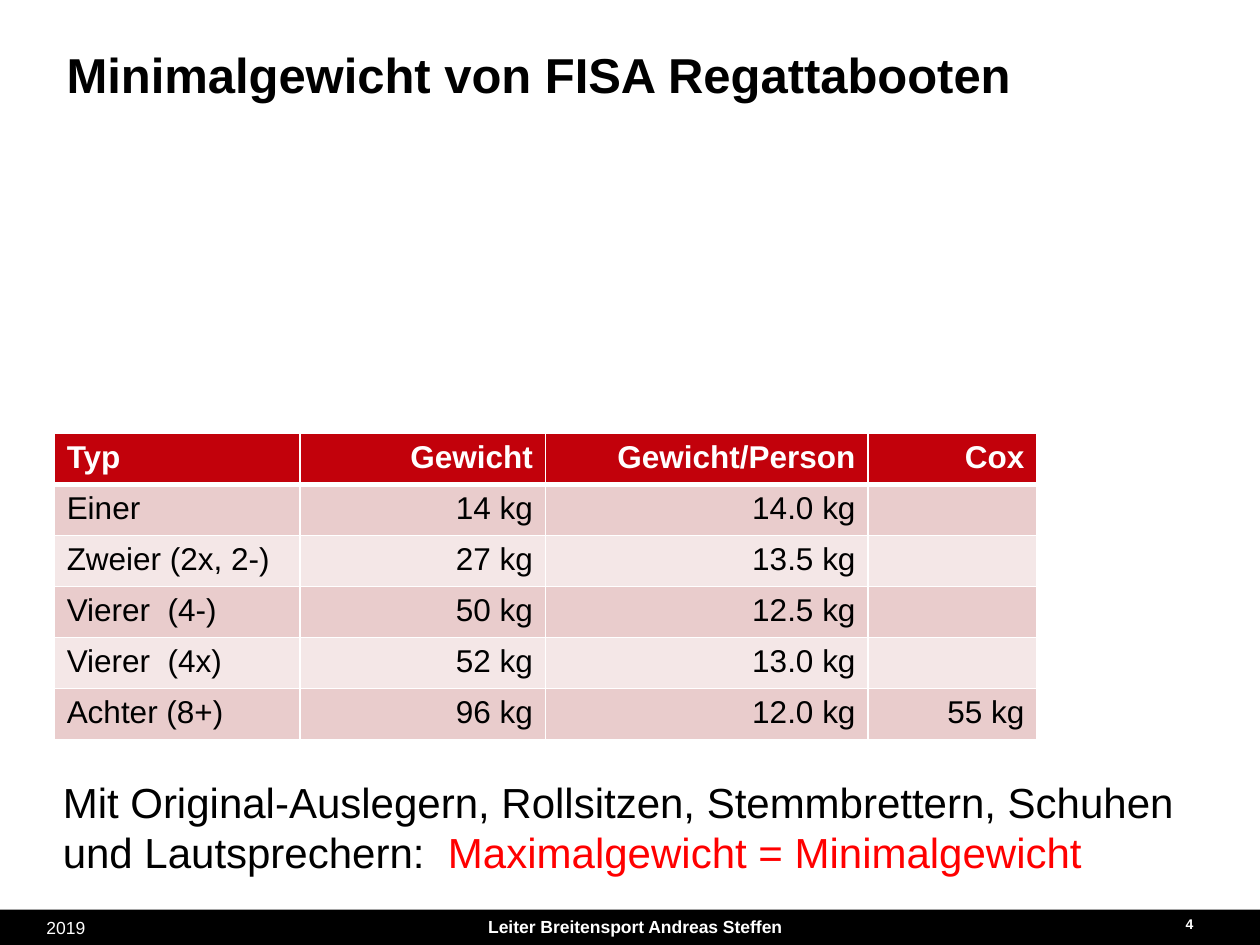
from pptx import Presentation
from pptx.dml.color import RGBColor
from pptx.enum.shapes import MSO_SHAPE
from pptx.enum.text import MSO_ANCHOR, PP_ALIGN
from pptx.oxml import parse_xml
from pptx.oxml.ns import nsdecls
from pptx.util import Inches, Pt

RECTANGLE = MSO_SHAPE.RECTANGLE
TOP, MIDDLE = MSO_ANCHOR.TOP, MSO_ANCHOR.MIDDLE
LEFT, CENTER, RIGHT = PP_ALIGN.LEFT, PP_ALIGN.CENTER, PP_ALIGN.RIGHT

BLACK, WHITE, RED = "000000", "FFFFFF", "FF0000"
HEADER_FILL = "C2010B"
BAND_FILLS = ("E9CCCC", "F4E7E7")
COLUMN_WIDTHS = (1.95, 1.95, 2.56, 1.34)
BOATS = (
    ("Typ", "Gewicht", "Gewicht/Person", "Cox"),
    ("Einer", "14 kg", "14.0 kg", ""),
    ("Zweier (2x, 2-)", "27 kg", "13.5 kg", ""),
    ("Vierer  (4-)", "50 kg", "12.5 kg", ""),
    ("Vierer  (4x)", "52 kg", "13.0 kg", ""),
    ("Achter (8+)", "96 kg", "12.0 kg", "55 kg"),
)


def rgb(value):
    return RGBColor.from_string(value)


def lengths(box):
    return [Inches(value) for value in box]


def style_font(font, size, color, bold=False):
    settings = {"name": "Arial", "size": Pt(size), "bold": bold}
    for name, value in settings.items():
        setattr(font, name, value)
    font.color.rgb = rgb(color)


def write(frame, phrases, size, align=LEFT, anchor=TOP, bold=False):
    frame.word_wrap = True
    frame.vertical_anchor = anchor
    paragraph = frame.paragraphs[0]
    paragraph.alignment = align
    for words, color in phrases:
        run = paragraph.add_run()
        run.text = words
        style_font(run.font, size, color, bold)


def add_panel(slide, box, fill):
    panel = slide.shapes.add_shape(RECTANGLE, *lengths(box))
    panel.shadow.inherit = False
    panel.fill.solid()
    panel.fill.fore_color.rgb = rgb(fill)
    panel.line.fill.background()
    return panel


def add_label(slide, box, words, size, **layout):
    label = slide.shapes.add_textbox(*lengths(box))
    write(label.text_frame, [(words, WHITE)], size, **layout)


def add_footer(slide, box):
    left, top, width, height = box
    add_panel(slide, box, BLACK)
    add_label(slide, (left + 0.27, top + 0.01, 1.42, height), "2019", 10)
    add_label(slide, (left + 1.14, top, 7.8, height),
              "Leiter Breitensport Andreas Steffen", 10, align=CENTER, bold=True)
    add_label(slide, (left + width - 0.9, top - 0.09, 0.47, 0.4), "4", 8,
              align=RIGHT, anchor=MIDDLE, bold=True)


def add_title(slide, box):
    title = add_panel(slide, box, WHITE)
    write(title.text_frame, [("Minimalgewicht von FISA Regattabooten", BLACK)],
          28, anchor=MIDDLE, bold=True)


def add_remark(slide, box):
    remark = add_panel(slide, box, WHITE)
    write(remark.text_frame, [
        ("Mit Original-Auslegern, Rollsitzen, Stemmbrettern, Schuhen "
         "und Lautsprechern:  ", BLACK),
        ("Maximalgewicht = Minimalgewicht", RED),
    ], 24)


def set_borders(cell, widths):
    properties = cell._tc.get_or_add_tcPr()
    for position, (side, width) in enumerate(widths.items()):
        properties.insert(position, parse_xml(
            f'<a:{side} {nsdecls("a")} w="{Pt(width)}"><a:solidFill>'
            f'<a:srgbClr val="{WHITE}"/></a:solidFill></a:{side}>'))


def add_weight_table(slide, box):
    table = slide.shapes.add_table(len(BOATS), len(COLUMN_WIDTHS), *lengths(box)).table
    for column, width in zip(table.columns, COLUMN_WIDTHS):
        column.width = Inches(width)
    for row, boat in enumerate(BOATS):
        header = row == 0
        fill = HEADER_FILL if header else BAND_FILLS[(row - 1) % 2]
        color = WHITE if header else BLACK
        for column, entry in enumerate(boat):
            cell = table.cell(row, column)
            cell.fill.solid()
            cell.fill.fore_color.rgb = rgb(fill)
            set_borders(cell, {"lnL": 1, "lnR": 1,
                               "lnT": 3 if row == 1 else 1,
                               "lnB": 3 if header else 1})
            if entry:
                write(cell.text_frame, [(entry, color)], 18,
                      align=RIGHT if column else LEFT, bold=header)


def main():
    presentation = Presentation()
    presentation.slide_width = Inches(10)
    presentation.slide_height = Inches(7.5)
    slide = presentation.slides.add_slide(presentation.slide_layouts[6])
    add_title(slide, (0.43, 0.27, 7.72, 0.63))
    add_remark(slide, (0.4, 6.11, 9.14, 0.79))
    add_footer(slide, (0, 7.22, 10, 0.28))
    add_weight_table(slide, (0.43, 3.44, 7.8, 2.43))
    presentation.save("out.pptx")


if __name__ == "__main__":
    main()
